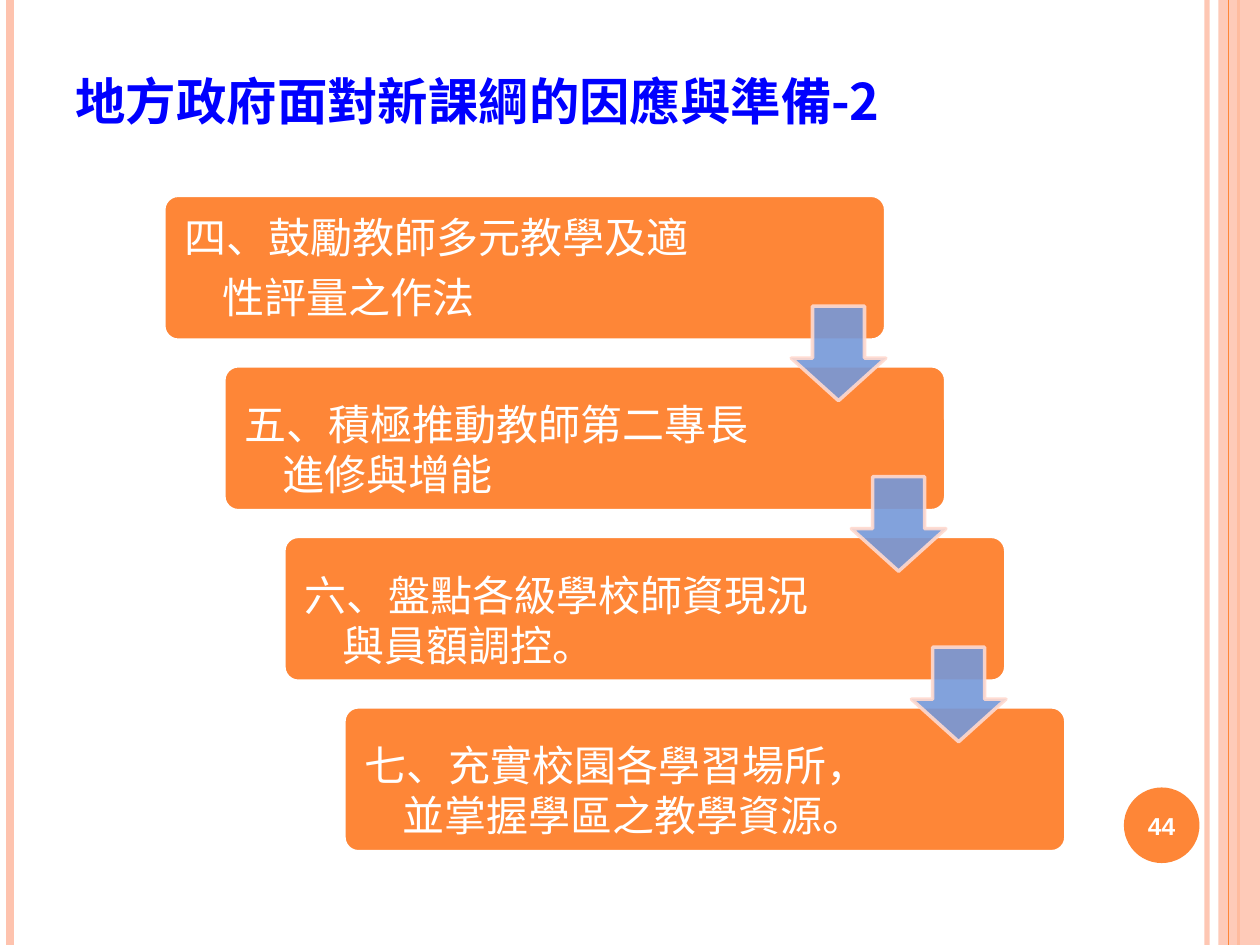
from pptx import Presentation
from pptx.dml.color import RGBColor
from pptx.enum.shapes import MSO_CONNECTOR, MSO_SHAPE
from pptx.enum.text import MSO_ANCHOR, PP_ALIGN
from pptx.oxml.ns import qn
from pptx.util import Inches, Pt
from lxml import etree

RECT, ROUND = MSO_SHAPE.RECTANGLE, MSO_SHAPE.ROUNDED_RECTANGLE
OVAL, DOWN = MSO_SHAPE.OVAL, MSO_SHAPE.DOWN_ARROW
LINE = MSO_CONNECTOR.STRAIGHT
MID, LOW = MSO_ANCHOR.MIDDLE, MSO_ANCHOR.BOTTOM
LEFT, CENTER = PP_ALIGN.LEFT, PP_ALIGN.CENTER

COLS, ROWS = 100, 75
UNIT = Inches(10) // COLS
ORANGE, PEACH, WHITE, BLUE = "FE8637", "FEC3AE", "FFFFFF", "0000FF"
CJK = "Noto Sans CJK SC"

STEPS = [
    ("四、鼓勵教師多元教學及適", "性評量之作法"),
    ("五、積極推動教師第二專長", "進修與增能"),
    ("六、盤點各級學校師資現況", "與員額調控。"),
    ("七、充實校園各學習場所，", "並掌握學區之教學資源。"),
]


def grid(*cells):
    """Turn grid cells into slide lengths."""
    return [round(cell * UNIT) for cell in cells]


def color(code):
    """Give the colour of a hex string."""
    return RGBColor.from_string(code)


def fade(part, share):
    """Set the opacity of a filled part, in percent."""
    for node in part.iter(qn("a:srgbClr")):
        etree.SubElement(node, qn("a:alpha")).set("val", str(share * 1000))


def shape(slide, kind, box, fill, line=None, alpha=100, adj=()):
    """Add a flat preset shape."""
    item = slide.shapes.add_shape(kind, *grid(*box))
    item.shadow.inherit = False
    item.fill.solid()
    item.fill.fore_color.rgb = color(fill)
    if line:
        item.line.color.rgb = color(line)
        item.line.width = Pt(2)
    else:
        item.line.fill.background()
    for i, value in enumerate(adj):
        item.adjustments[i] = value
    if alpha < 100:
        fade(item._element.spPr, alpha)
    return item


def rule(slide, x, width, tint, alpha=100):
    """Add a full-height vertical rule."""
    item = slide.shapes.add_connector(LINE, *grid(x, 0, x, ROWS))
    item.line.color.rgb = color(tint)
    item.line.width = Pt(width)
    props = item._element.spPr
    if alpha < 100:
        fade(props, alpha)
    etree.SubElement(props, qn("a:effectLst"))


def write(item, rows, font, tint, anchor=MID, align=LEFT, pad=(0, 0, 0, 0), **look):
    """Fill a shape with one paragraph per row."""
    frame = item.text_frame
    frame.word_wrap = True
    frame.vertical_anchor = anchor
    sides = ("left", "top", "right", "bottom")
    for side, gap in zip(sides, grid(*pad)):
        setattr(frame, "margin_" + side, gap)
    for i, row in enumerate(rows):
        para = frame.paragraphs[0] if i == 0 else frame.add_paragraph()
        para.alignment = align
        run = para.add_run()
        run.text = row
        for name, value in {"name": font, **look}.items():
            setattr(run.font, name, value)
        run.font.color.rgb = color(tint)
        etree.SubElement(run._r.get_or_add_rPr(), qn("a:ea")).set("typeface", font)
    return frame.paragraphs


def frame(slide):
    """Draw the rules and band at the slide's edges."""
    rule(slide, 95.8, 3, PEACH, 93)
    rule(slide, 0.8, 4.5, PEACH)
    rule(slide, 98.3, 1.5, ORANGE)
    shape(slide, RECT, (96.7, 0, 3.3, ROWS), PEACH, alpha=87)
    rule(slide, 97.5, 0.75, ORANGE)


def title(slide, box, text):
    """Place the slide title."""
    item = slide.shapes.add_textbox(*grid(*box))
    write(item, [text], CJK, BLUE, pad=(1, 0, 1, 0), size=Pt(28.8), bold=True)


def badge(slide, box, text):
    """Place the round page number."""
    item = shape(slide, OVAL, box, ORANGE)
    write(item, [text], "Arial", WHITE, align=CENTER, size=Pt(14), bold=True)


def card(slide, box, rows, first):
    """Draw one step with its hanging second row."""
    item = shape(slide, ROUND, box, ORANGE, WHITE, adj=[0.1])
    pad = (1.3, 0, 1, 1.1 if first else 0.6)
    paras = write(item, rows, CJK, WHITE, LOW, pad=pad, size=Pt(24))
    for para in paras:
        para.line_spacing = Pt(28.6)
    paras[1]._p.get_or_add_pPr().set("marL", str(round(3 * UNIT)))
    if first:
        paras[1].space_before = Pt(5.7)


def stairs(slide, box, steps):
    """Lay the steps out as a falling staircase with arrows."""
    x, y, w, h = box
    wide, high, side = 57.3, 11.5, 7.5
    last = len(steps) - 1
    dx, dy = (w - wide) / last, (h - high) / last
    spots = [(x + i * dx, y + i * dy) for i in range(last + 1)]
    for i, (spot, rows) in enumerate(zip(spots, steps)):
        card(slide, (*spot, wide, high), rows, i == 0)
    for left, top in spots[:last]:
        arrow = (left + wide - side, top + 8.8, side, side)
        shape(slide, DOWN, arrow, "7598D9", "FFD9CE", 90, [0.55, 0.45])


def main():
    """Build and save the slide."""
    deck = Presentation()
    deck.slide_width, deck.slide_height = grid(COLS, ROWS)
    slide = deck.slides.add_slide(deck.slide_layouts[6])
    frame(slide)
    title(slide, (5, 4, 83.9, 8), "地方政府面對新課綱的因應與準備-2")
    badge(slide, (89.2, 62.5, 6, 6), "44")
    stairs(slide, (13, 15.5, 71.6, 52.1), STEPS)
    deck.save("out.pptx")


if __name__ == "__main__":
    main()
